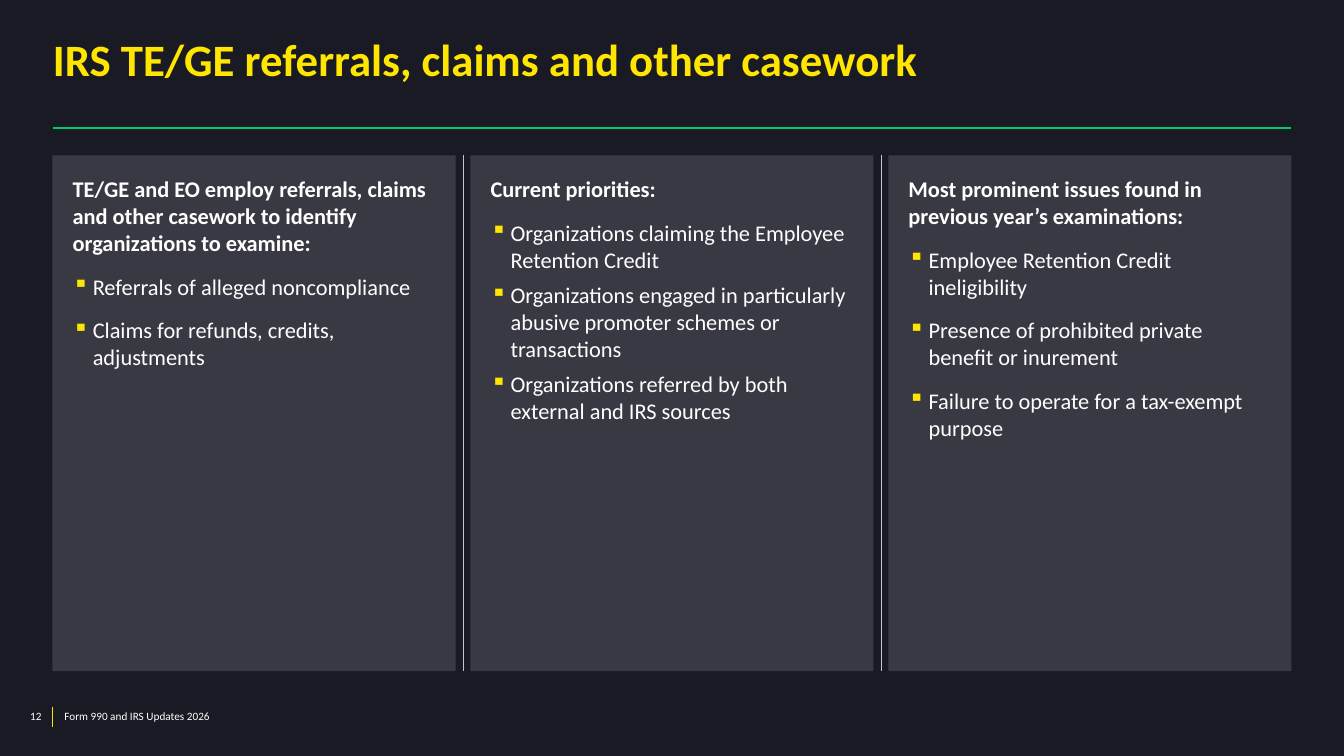
import pptx
import pptx.util
import pptx.dml.color
import pptx.enum.shapes
import pptx.enum.text
import pptx.oxml.ns
from lxml import etree

Pt = pptx.util.Pt
ALIGN = pptx.enum.text.PP_ALIGN
YELLOW, WHITE, GREEN = "FFE600", "FFFFFF", "00C864"
BACKGROUND, PANEL, DIVIDER = "1A1A24", "747480", "C4C4CD"

COLUMNS = [
    ("TE/GE and EO employ referrals, claims and other casework to identify "
     "organizations to examine:", 12,
     ["Referrals of alleged noncompliance",
      "Claims for refunds, credits, adjustments"]),
    ("Current priorities:", 6,
     ["Organizations claiming the Employee Retention Credit",
      "Organizations engaged in particularly abusive promoter schemes or transactions",
      "Organizations referred by both external and IRS sources"]),
    ("Most prominent issues found in previous year’s examinations:", 12,
     ["Employee Retention Credit ineligibility",
      "Presence of prohibited private benefit or inurement",
      "Failure to operate for a tax-exempt purpose"]),
]


def rgb(color):
    return pptx.dml.color.RGBColor.from_string(color)


def add_xml(parent, tag, **attributes):
    return etree.SubElement(parent, pptx.oxml.ns.qn(tag), **attributes)


def format_runs(p, size, color, bold=False):
    for r in p.runs:
        r.font.name = "Calibri"
        r.font.size = Pt(size)
        r.font.bold = bold
        r.font.color.rgb = rgb(color)


def set_margins(tf, left=0, top=0, right=0, bottom=0):
    tf.margin_left, tf.margin_top = Pt(left), Pt(top)
    tf.margin_right, tf.margin_bottom = Pt(right), Pt(bottom)
    tf.word_wrap = True


def add_line(s, x1, y1, x2, y2, color, width):
    line = s.shapes.add_connector(pptx.enum.shapes.MSO_CONNECTOR.STRAIGHT,
                                  Pt(x1), Pt(y1), Pt(x2), Pt(y2))
    line.line.color.rgb = rgb(color)
    line.line.width = Pt(width)
    add_xml(line.element.spPr, "a:effectLst")


def add_label(s, x, y, w, h, text, size, color, bold=False,
              align=ALIGN.LEFT, left=0, right=0):
    tf = s.shapes.add_textbox(Pt(x), Pt(y), Pt(w), Pt(h)).text_frame
    set_margins(tf, left=left, right=right)
    tf.text = text
    p = tf.paragraphs[0]
    p.alignment = align
    format_runs(p, size, color, bold)
    return p


def add_bullet(p):
    pPr = p._p.get_or_add_pPr()
    pPr.set("marL", str(Pt(14.4)))
    pPr.set("indent", str(-Pt(14.4)))
    add_xml(add_xml(pPr, "a:buClr"), "a:srgbClr", val=YELLOW)
    add_xml(pPr, "a:buChar", char="▪")


def add_header(s, x, y, w):
    p = add_label(s, x, y, w, 36.7,
                  "IRS TE/GE referrals, claims and other casework", 32, YELLOW, True)
    p.line_spacing = 0.85
    add_line(s, x, y + 62.6, x + w, y + 62.6, GREEN, 2)


def add_column(s, x, y, w, h, heading, spacing, items):
    sp = s.shapes.add_shape(pptx.enum.shapes.MSO_SHAPE.RECTANGLE,
                            Pt(x), Pt(y), Pt(w), Pt(h))
    sp.shadow.inherit = False
    sp.line.fill.background()
    sp.fill.solid()
    sp.fill.fore_color.rgb = rgb(PANEL)
    color = sp.element.spPr.find(".//" + pptx.oxml.ns.qn("a:srgbClr"))
    add_xml(color, "a:alpha", val="35000")

    tf = sp.text_frame
    set_margins(tf, 14.4, 14.4, 14.4, 7.2)
    tf.vertical_anchor = pptx.enum.text.MSO_ANCHOR.TOP
    tf.text = "\n".join([heading] + items)
    for i, p in enumerate(tf.paragraphs):
        p.alignment = ALIGN.LEFT
        p.space_after = Pt(spacing if i else 12)
        if i:
            add_bullet(p)
        format_runs(p, 16, WHITE, bold=i == 0)


def add_columns(s, x, y, w, h, gap=10.5):
    column_width = (w - gap * (len(COLUMNS) - 1)) / len(COLUMNS)
    for i, (heading, spacing, items) in enumerate(COLUMNS):
        left = x + i * (column_width + gap)
        if i:
            add_line(s, left - gap / 2, y, left - gap / 2, y + h, DIVIDER, 0.25)
        add_column(s, left, y, column_width, h, heading, spacing, items)


def add_footer(s, x, y, h):
    # Page number and document name on either side of the rule
    add_line(s, x, y, x, y + h, YELLOW, 1)
    add_label(s, x - 29.5, y + 2.2, 28.8, 9.6, "12", 8, WHITE,
              align=ALIGN.RIGHT, right=7.2)
    add_label(s, x + 1.4, y + 2.2, 432, 9.6, "Form 990 and IRS Updates 2026",
              8, WHITE, left=7.2)


def main():
    prs = pptx.Presentation()
    prs.slide_width, prs.slide_height = Pt(960), Pt(540)
    s = prs.slides.add_slide(prs.slide_layouts[6])
    s.background.fill.solid()
    s.background.fill.fore_color.rgb = rgb(BACKGROUND)

    add_header(s, 37.8, 28.8, 884.7)
    add_columns(s, 37.5, 111, 885, 368.5)
    add_footer(s, 37.5, 504.7, 14.4)
    prs.save("out.pptx")


if __name__ == "__main__":
    main()
